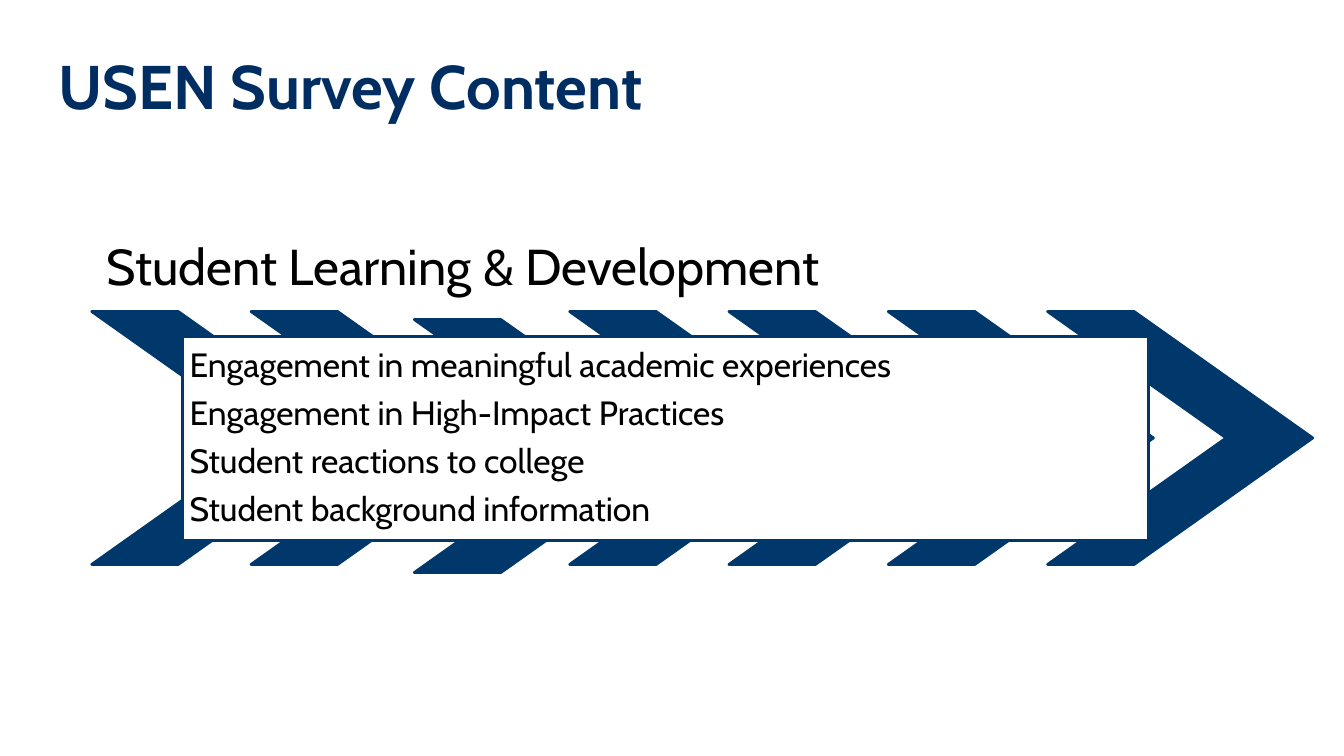
from pptx import Presentation
from pptx.dml.color import RGBColor
from pptx.enum.shapes import MSO_SHAPE
from pptx.enum.text import MSO_ANCHOR, PP_ALIGN
from pptx.util import Inches, Pt

CHEVRON = MSO_SHAPE.CHEVRON
RECT = MSO_SHAPE.RECTANGLE
TOP, MIDDLE, BOTTOM = MSO_ANCHOR.TOP, MSO_ANCHOR.MIDDLE, MSO_ANCHOR.BOTTOM
LEFT = PP_ALIGN.LEFT

FONT = "Cabin"
TITLE, NAVY, BLACK, WHITE = "002D62", "00386B", "000000", "FFFFFF"
TOPICS = [
    "Engagement in meaningful academic experiences",
    "Engagement in High-Impact Practices",
    "Student reactions to college",
    "Student background information",
]


def color(code):
    """Turn a hex string into a colour."""
    return RGBColor.from_string(code)


def write(shape, lines, size, ink=BLACK, bold=False, anchor=TOP,
          inset=(0.1, 0.05), spacing=1.0, after=0):
    """Fill a shape with one paragraph per line in the given format."""
    frame = shape.text_frame
    frame.word_wrap = True
    frame.vertical_anchor = anchor
    frame.margin_left = frame.margin_right = Inches(inset[0])
    frame.margin_top = frame.margin_bottom = Inches(inset[1])
    frame.text = "\n".join(lines)
    for para in frame.paragraphs:
        para.alignment = LEFT
        para.line_spacing = spacing
        para.space_after = Pt(after * size)
        font = para.font
        font.name, font.size, font.bold = FONT, Pt(size), bold
        font.color.rgb = color(ink)


def add_text(slide, box, lines, size, **style):
    """Place a text box and write its lines."""
    write(slide.shapes.add_textbox(*map(Inches, box)), lines, size, **style)


def add_block(slide, kind, box, fill):
    """Place a flat preset shape with a navy outline."""
    shape = slide.shapes.add_shape(kind, *map(Inches, box))
    shape.shadow.inherit = False
    shape.fill.solid()
    shape.fill.fore_color.rgb = color(fill)
    shape.line.color.rgb = color(NAVY)
    shape.line.width = Pt(2)
    return shape


def add_arrows(slide, box, count=7, shifted=2):
    """Spread chevrons evenly over the box, with one nudged off the row."""
    left, top, width, height = box
    size = 2.63
    step = (width - size) / (count - 1)
    for i in range(count):
        dx, dy = (0.04, 0.08) if i == shifted else (0, 0)
        place = (left + i * step + dx, top + dy, size, height)
        add_block(slide, CHEVRON, place, NAVY).adjustments[0] = 0.706


def add_process(slide, box):
    """Draw the heading, the chevron row and the panel of topics."""
    left, top, width, height = box
    head = 1.02
    row = top + head
    add_text(slide, (left, top, 11.24, head), ["Student Learning & Development"],
             36, anchor=BOTTOM, inset=(0.15, 0.15), spacing=0.9)
    add_arrows(slide, (left, row, width, height - head))
    panel = add_block(slide, RECT, (left + 0.9, row + 0.25, 9.58, 2.02), WHITE)
    write(panel, TOPICS, 24, anchor=MIDDLE, inset=(0.07, 0.07),
          spacing=0.9, after=0.35)


def main():
    """Build and save the slide."""
    deck = Presentation()
    deck.slide_width, deck.slide_height = Inches(13.33), Inches(7.5)
    slide = deck.slides.add_slide(deck.slide_layouts[6])
    add_text(slide, (0.48, 0.43, 9.42, 1.25), ["USEN Survey Content"], 44,
             ink=TITLE, bold=True)
    add_process(slide, (0.91, 2.07, 12.11, 3.53))
    deck.save("out.pptx")


if __name__ == "__main__":
    main()
